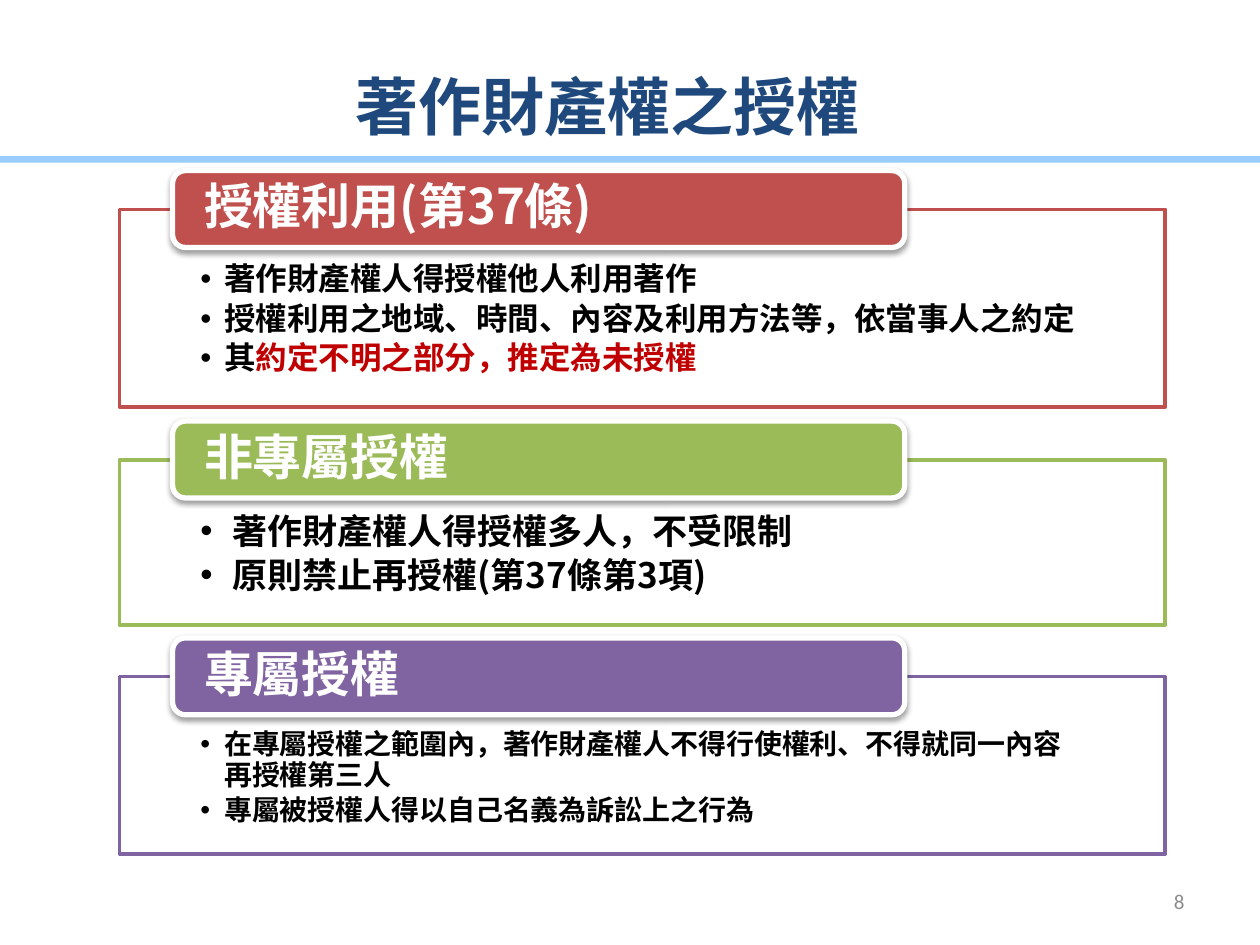
import pptx
import pptx.util
import pptx.dml.color
import pptx.enum.shapes
import pptx.enum.text
import pptx.oxml
import pptx.oxml.ns
from dataclasses import dataclass
from lxml import etree

Cm = pptx.util.Cm
Pt = pptx.util.Pt
RGB = pptx.dml.color.RGBColor.from_string
qn = pptx.oxml.ns.qn
SHAPE = pptx.enum.shapes.MSO_SHAPE
ANCHOR = pptx.enum.text.MSO_ANCHOR
ALIGN = pptx.enum.text.PP_ALIGN


@dataclass(frozen=True)
class Theme:
    font: str = "Noto Sans CJK SC"
    number_font: str = "Calibri"
    title: str = "1F497D"
    rule: str = "99CCFF"
    white: str = "FFFFFF"
    black: str = "000000"
    accent: str = "C00000"
    grey: str = "8C8C8C"
    red: str = "C0504D"
    green: str = "9BBB59"
    purple: str = "8064A2"
    title_size: int = 36
    heading_size: int = 28
    number_size: int = 12


theme = Theme()


def format_span(span, size, color, font=theme.font, bold=True):
    span.font.size = Pt(size)
    span.font.bold = bold
    span.font.name = font
    span.font.color.rgb = RGB(color)
    east_asian = etree.Element(qn("a:ea"), typeface=font)
    span.font._element.find(qn("a:latin")).addnext(east_asian)


def set_frame(frame, left, top, right, bottom, anchor):
    frame.word_wrap = True
    frame.auto_size = pptx.enum.text.MSO_AUTO_SIZE.NONE
    frame.margin_left, frame.margin_top = Cm(left), Cm(top)
    frame.margin_right, frame.margin_bottom = Cm(right), Cm(bottom)
    frame.vertical_anchor = anchor


sections = [
    ("授權利用(第37條)", theme.red, 4.22, 3.99, 18, 0.48, [
        [("著作財產權人得授權他人利用著作", theme.black)],
        [("授權利用之地域、時間、內容及利用方法等，依當事人之約定", theme.black)],
        [("其", theme.black), ("約定不明之部分，推定為未授權", theme.accent)],
    ]),
    ("非專屬授權", theme.green, 9.27, 3.33, 20, 0.64, [
        [("著作財產權人得授權多人，不受限制", theme.black)],
        [("原則禁止再授權(第37條第3項)", theme.black)],
    ]),
    ("專屬授權", theme.purple, 13.64, 3.58, 16, 0.48, [
        [("在專屬授權之範圍內，著作財產權人不得行使權利、不得就同一內容再授權第三人", theme.black)],
        [("專屬被授權人得以自己名義為訴訟上之行為", theme.black)],
    ]),
]

deck = pptx.Presentation()
deck.slide_width = Cm(25.4)
deck.slide_height = Cm(19.05)
page = deck.slides.add_slide(deck.slide_layouts[5])

title = page.shapes.title
title.left, title.top, title.width, title.height = Cm(6.91), Cm(1.12), Cm(17.65), Cm(2)
title.text_frame.text = "著作財產權之授權"
set_frame(title.text_frame, 0.25, 0.13, 0.25, 0.13, ANCHOR.MIDDLE)
title.text_frame.paragraphs[0].alignment = ALIGN.LEFT
format_span(title.text_frame.paragraphs[0].runs[0], theme.title_size, theme.title)

rule = page.shapes.add_shape(SHAPE.RECTANGLE, Cm(-0.1), Cm(3.15), Cm(25.55), Cm(0.13))
rule.shadow.inherit = False
rule.fill.solid()
rule.fill.fore_color.rgb = RGB(theme.rule)
rule.line.fill.background()

for heading, color, top, height, size, indent, points in sections:
    box = page.shapes.add_shape(SHAPE.RECTANGLE, Cm(2.41), Cm(top), Cm(21.08), Cm(height))
    box.shadow.inherit = False
    box.fill.solid()
    box.fill.fore_color.rgb = RGB(theme.white)
    fill_color = box._element.spPr.find(qn("a:solidFill"))[0]
    etree.SubElement(fill_color, qn("a:alpha"), val="90000")
    box.line.color.rgb = RGB(color)
    box.line.width = Pt(2)
    set_frame(box.text_frame, 1.63, 1.09, 1.63, 0.35, ANCHOR.TOP)
    for index, pieces in enumerate(points):
        para = box.text_frame.add_paragraph() if index else box.text_frame.paragraphs[0]
        para.level = 1
        para.alignment = ALIGN.LEFT
        para.line_spacing = 0.9
        para.space_after = Pt(round(size * 0.18, 1))
        properties = para._p.get_or_add_pPr()
        properties.set("marL", str(Cm(indent)))
        properties.set("indent", str(-Cm(indent)))
        etree.SubElement(properties, qn("a:buFont"), typeface="Arial")
        etree.SubElement(properties, qn("a:buChar"), char="•")
        for words, ink in pieces:
            span = para.add_run()
            span.text = words
            format_span(span, size, ink)

    tab = page.shapes.add_shape(SHAPE.ROUNDED_RECTANGLE, Cm(3.48), Cm(top - 0.78), Cm(14.76), Cm(1.55))
    tab.shadow.inherit = False
    tab.fill.solid()
    tab.fill.fore_color.rgb = RGB(color)
    tab.line.color.rgb = RGB(theme.white)
    tab.line.width = Pt(3)
    shadow = etree.SubElement(
        tab._element.spPr.find(qn("a:effectLst")), qn("a:outerShdw"),
        blurRad=str(Pt(3.1)), dist=str(Pt(1.6)), dir="5400000", rotWithShape="0")
    shadow_color = etree.SubElement(shadow, qn("a:srgbClr"), val=theme.black)
    etree.SubElement(shadow_color, qn("a:alpha"), val="38000")
    set_frame(tab.text_frame, 0.56, 0, 0.56, 0, ANCHOR.MIDDLE)
    tab.text_frame.text = heading
    para = tab.text_frame.paragraphs[0]
    para.alignment = ALIGN.LEFT
    para.line_spacing = 0.9
    format_span(para.runs[0], theme.heading_size, theme.white)

number = page.shapes.add_textbox(Cm(18.2), Cm(17.66), Cm(5.93), Cm(1.01))
number.text_frame.text = "8"
set_frame(number.text_frame, 0.25, 0.13, 0.25, 0.13, ANCHOR.MIDDLE)
number.text_frame.paragraphs[0].alignment = ALIGN.RIGHT
format_span(number.text_frame.paragraphs[0].runs[0], theme.number_size, theme.grey, theme.number_font, False)

deck.save("out.pptx")
